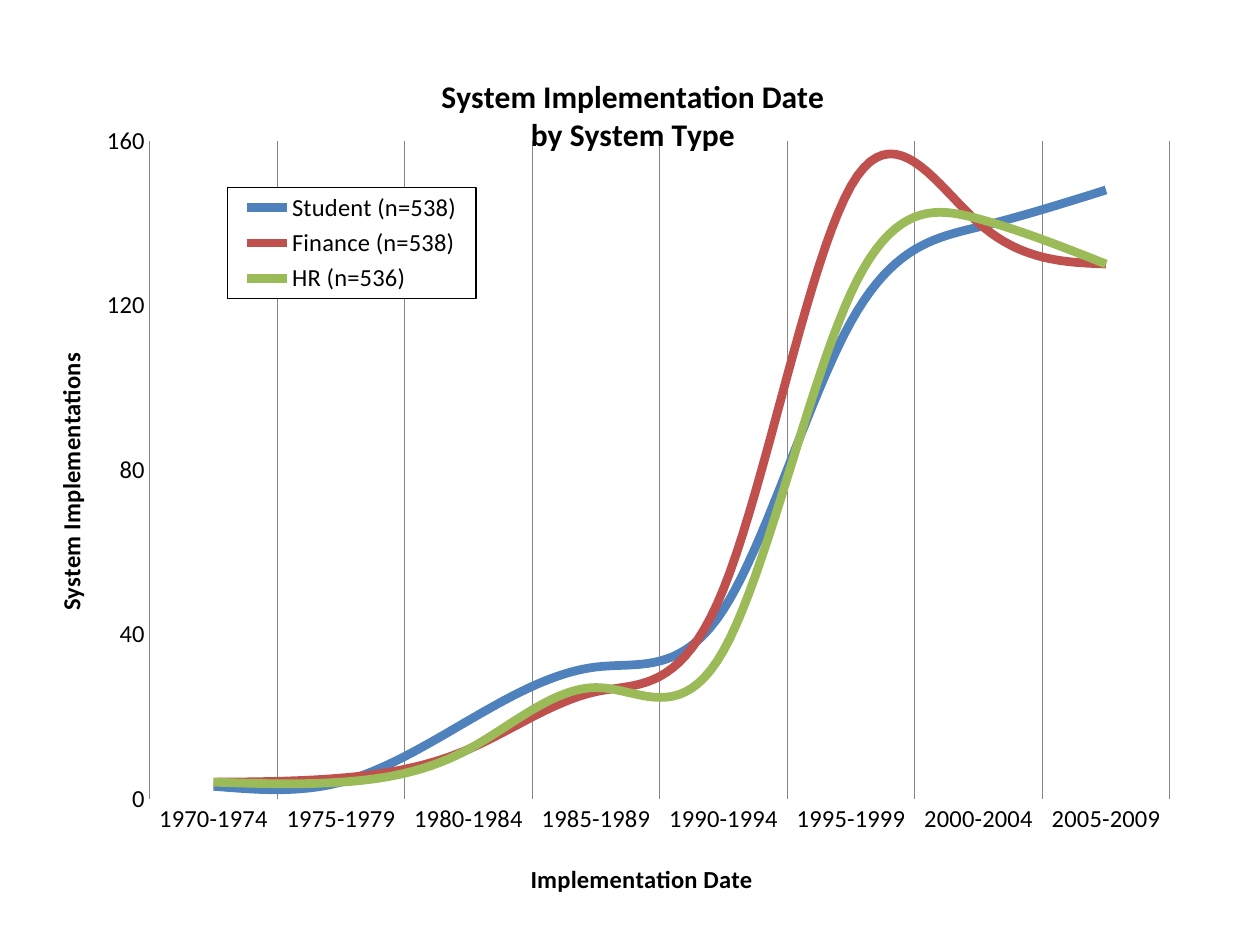
from lxml import etree
from pptx import Presentation
from pptx import util as u
from pptx.chart.data import CategoryChartData
from pptx.dml.color import RGBColor
from pptx.enum import chart as ch
from pptx.oxml import parse_xml
from pptx.oxml.ns import qn, nsdecls

COLORS = {
    "ink": "000000", "paper": "FFFFFF", "grid": "868686",
    "student": "4F81BD", "finance": "C0504D", "hr": "9BBB59",
}
PERIODS = [f"{year}-{year + 4}" for year in range(1970, 2010, 5)]
SYSTEMS = [
    ("Student (n=538)", "student", (3, 4, 19, 32, 46, 116, 139, 148)),
    ("Finance (n=538)", "finance", (4, 5, 12, 26, 51, 149, 140, 130)),
    ("HR (n=536)", "hr", (4, 4, 12, 27, 36, 123, 141, 130)),
]


def place(element, x, y, w=None, h=None, inner=False):
    for previous in element.findall(qn("c:layout")):
        element.remove(previous)
    layout = parse_xml(f"<c:layout {nsdecls('c')}><c:manualLayout/></c:layout>")
    settings = [("layoutTarget", "inner")] if inner else []
    settings += [("xMode", "edge"), ("yMode", "edge"), ("x", x), ("y", y)]
    settings += [(tag, size) for tag, size in (("w", w), ("h", h)) if size]
    for tag, value in settings:
        etree.SubElement(layout[0], qn(f"c:{tag}")).set("val", str(value))
    if inner:
        element.insert(0, layout)
    else:
        element[0].addnext(layout)


class Deck:
    font_name = "Calibri"
    label_size = 14
    title_size = 18

    def __init__(self, width, height):
        self.presentation = Presentation()
        self.presentation.slide_width = u.Cm(width)
        self.presentation.slide_height = u.Cm(height)
        self.slide = self.presentation.slides.add_slide(
            self.presentation.slide_layouts[6])

    def color(self, key):
        return RGBColor.from_string(COLORS[key])

    def style(self, font, size, bold=False):
        font.name = self.font_name
        font.size = u.Pt(size)
        font.bold = bold
        font.color.rgb = self.color("ink")

    def heading(self, title, lines, size, x, y):
        frame = title.text_frame
        for index, line in enumerate(lines):
            paragraph = frame.add_paragraph() if index else frame.paragraphs[0]
            run = paragraph.add_run()
            run.text = line
            self.style(run.font, size, bold=True)
        place(title._element, x, y)

    def line_chart(self, left, top, width, height, categories, series):
        data = CategoryChartData()
        data.categories = categories
        for name, _, values in series:
            data.add_series(name, values)
        chart = self.slide.shapes.add_chart(
            ch.XL_CHART_TYPE.LINE, u.Cm(left), u.Cm(top),
            u.Cm(width), u.Cm(height), data).chart
        self.style(chart.font, 10)
        chart.plots[0].vary_by_categories = False
        for line, (_, key, _) in zip(chart.plots[0].series, series):
            line.smooth = True
            line.marker.style = ch.XL_MARKER_STYLE.NONE
            line.format.line.color.rgb = self.color(key)
            line.format.line.width = u.Pt(5)
        plot_area = chart._chartSpace.chart.plotArea
        place(plot_area, 0.098, 0.117, 0.854, 0.758, inner=True)
        return chart

    def axis(self, axis, title, x, y):
        axis.major_tick_mark = ch.XL_TICK_MARK.NONE
        axis.minor_tick_mark = ch.XL_TICK_MARK.NONE
        axis.format.line.fill.background()
        self.style(axis.tick_labels.font, self.label_size)
        self.heading(axis.axis_title, [title], self.label_size, x, y)

    def legend(self, chart, x, y, w, h):
        chart.has_legend = True
        legend = chart.legend
        legend.position = ch.XL_LEGEND_POSITION.RIGHT
        legend.include_in_layout = False
        self.style(legend.font, self.label_size)
        place(legend._element, x, y, w, h)
        frame = parse_xml(
            f'<c:spPr {nsdecls("c", "a")}>'
            f'<a:solidFill><a:srgbClr val="{COLORS["paper"]}"/></a:solidFill>'
            f'<a:ln w="9525"><a:solidFill><a:srgbClr val="{COLORS["ink"]}"/>'
            '</a:solidFill></a:ln></c:spPr>')
        legend._element.find(qn("c:txPr")).addprevious(frame)


def main():
    deck = Deck(25.4, 19.05)
    chart = deck.line_chart(0.66, 0.79, 24.08, 17.5, PERIODS, SYSTEMS)

    chart.has_title = True
    deck.heading(chart.chart_title,
                 ["System Implementation Date", "by System Type"],
                 deck.title_size, 0.339, 0.038)
    chart.chart_title.include_in_layout = True

    periods = chart.category_axis
    deck.axis(periods, "Implementation Date", 0.413, 0.943)
    periods.has_major_gridlines = True
    periods.major_gridlines.format.line.color.rgb = deck.color("grid")
    periods.major_gridlines.format.line.width = u.Pt(0.75)

    counts = chart.value_axis
    deck.axis(counts, "System Implementations", 0.014, 0.356)
    counts.has_major_gridlines = False
    counts.minimum_scale, counts.maximum_scale = 0, 160
    counts.major_unit = 40

    deck.legend(chart, 0.163, 0.171, 0.208, 0.128)
    deck.presentation.save("out.pptx")


if __name__ == "__main__":
    main()
